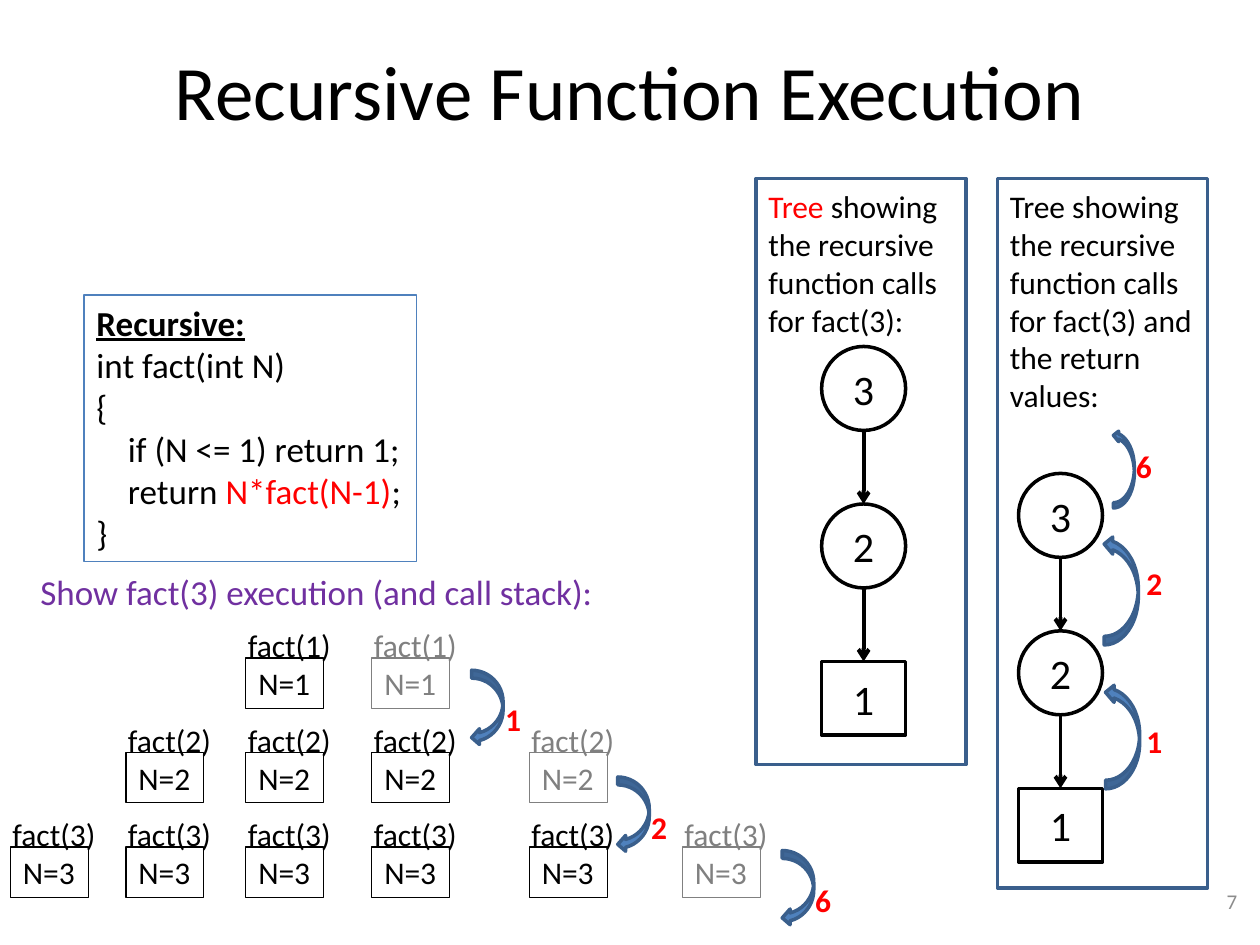
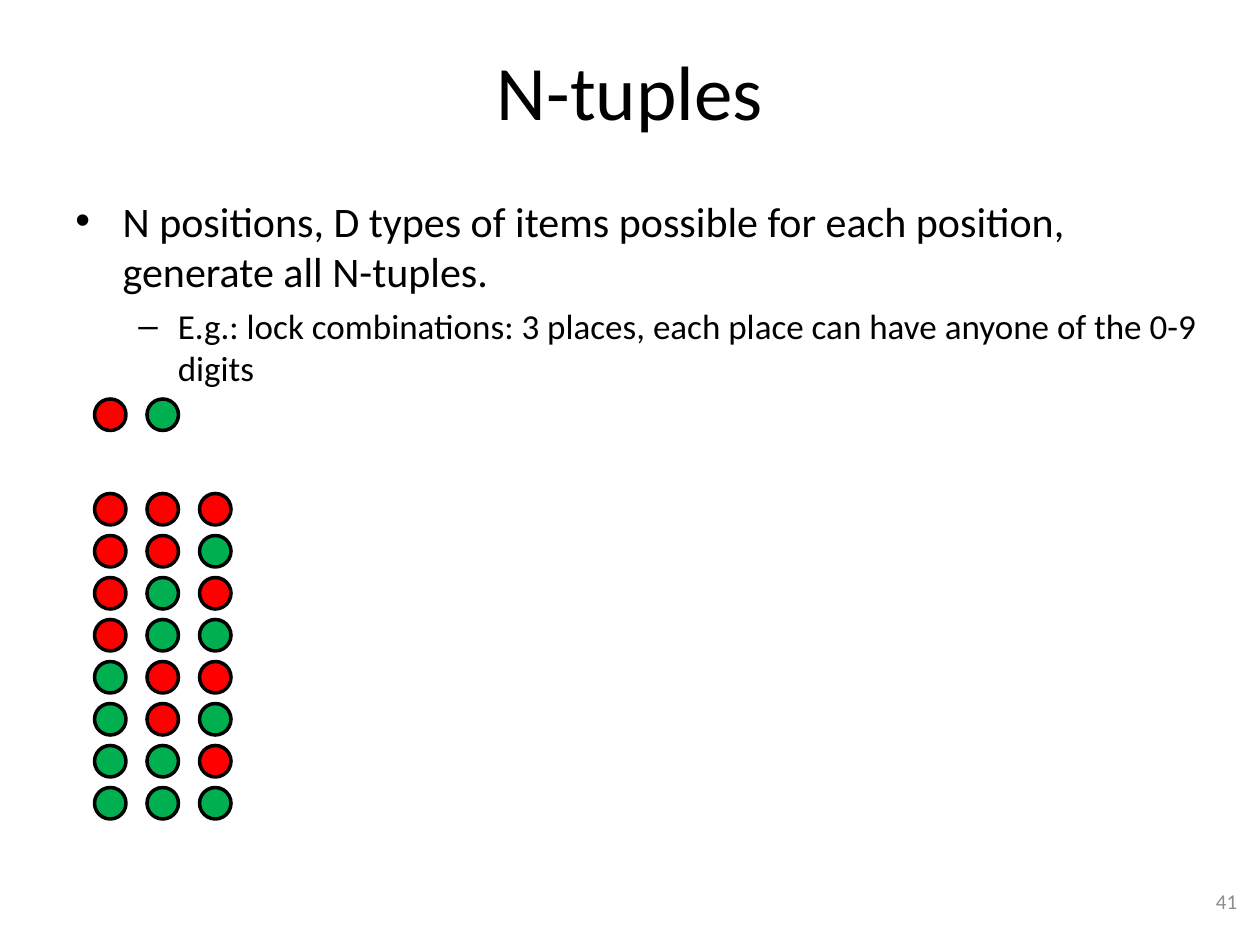
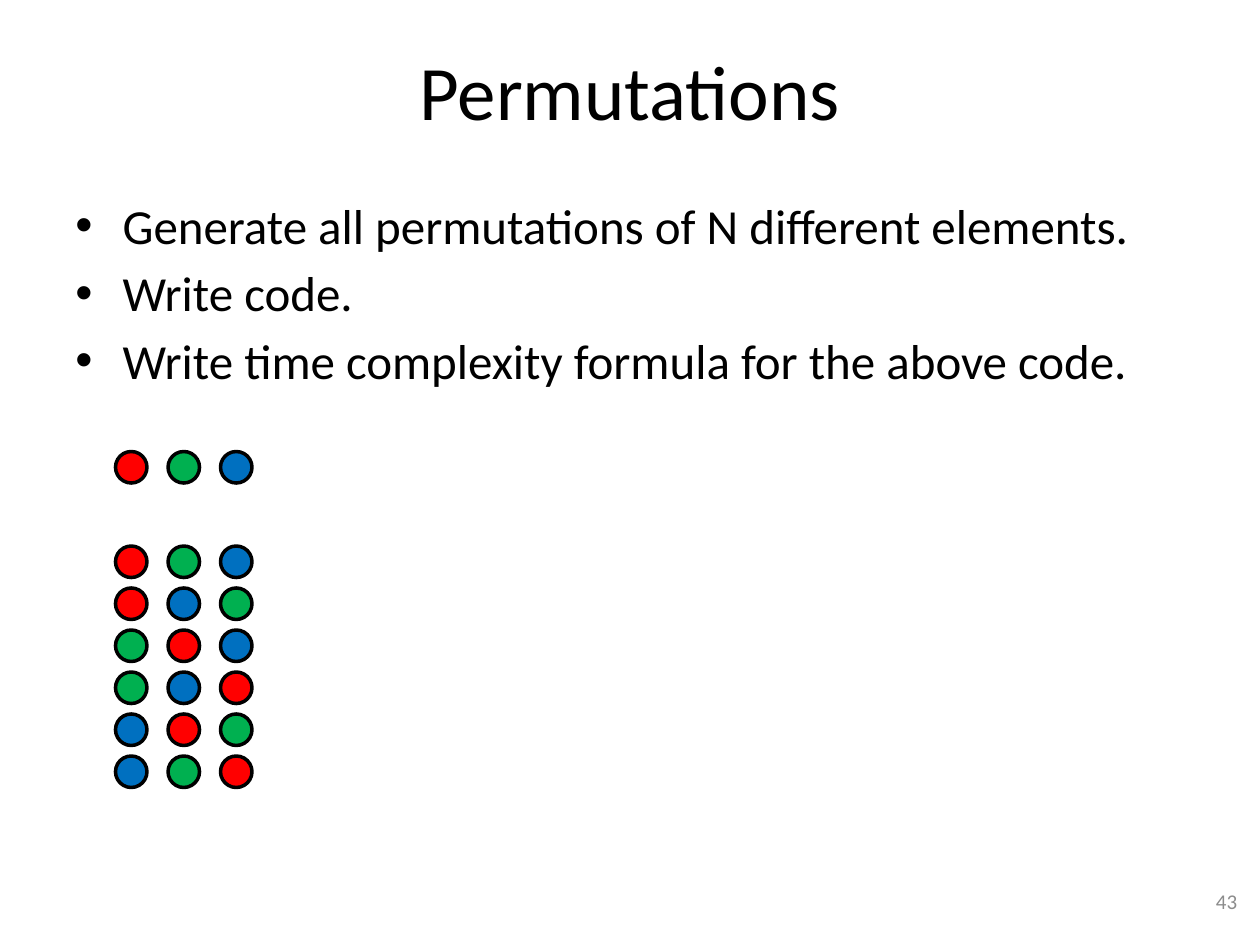
from itertools import permutations, product

from lxml import etree
from pptx import Presentation
from pptx.dml.color import RGBColor
from pptx.enum import shapes, text
from pptx.oxml import ns
from pptx.util import Pt

COLORS = {
    "black": "000000", "red": "FF0000", "green": "00B050", "blue": "0070C0",
    "purple": "7030A0", "gray": "808080", "number": "8C8C8C",
    "accent": "4F81BD", "accent_dark": "3A5F8C",
}
FONT = "Calibri"
RECTANGLE = shapes.MSO_SHAPE.RECTANGLE
OVAL = shapes.MSO_SHAPE.OVAL
LEFT, CENTER, RIGHT = text.PP_ALIGN.LEFT, text.PP_ALIGN.CENTER, text.PP_ALIGN.RIGHT
TOP, MIDDLE = text.MSO_ANCHOR.TOP, text.MSO_ANCHOR.MIDDLE


def add_shape(slide, kind, box, fill=None, line="black", width=2):
    shape = slide.shapes.add_shape(kind, *map(Pt, box))
    shape.shadow.inherit = False
    if fill:
        shape.fill.solid()
        shape.fill.fore_color.rgb = RGBColor.from_string(COLORS[fill])
    else:
        shape.fill.background()
    shape.line.color.rgb = RGBColor.from_string(COLORS[line])
    shape.line.width = Pt(width)
    return shape


def write(shape, lines, size, color="black", bold=False, align=LEFT,
          anchor=TOP, wrap=True, grow=False):
    """Fill a shape with lines; a line is a string or a list of (text, color) runs."""
    frame = shape.text_frame
    frame.word_wrap = wrap
    frame.vertical_anchor = anchor
    if grow:
        frame.auto_size = text.MSO_AUTO_SIZE.SHAPE_TO_FIT_TEXT
    for index, line in enumerate(lines):
        paragraph = frame.add_paragraph() if index else frame.paragraphs[0]
        paragraph.alignment = align
        paragraph.font.name = FONT
        paragraph.font.size = Pt(size)
        paragraph.font.bold = bold
        for words, run_color in [(line, color)] if isinstance(line, str) else line:
            run = paragraph.add_run()
            run.text = words
            run.font.color.rgb = RGBColor.from_string(COLORS[run_color])
    return frame.paragraphs


presentation = Presentation()
presentation.slide_width, presentation.slide_height = Pt(720), Pt(540)

# Titles and slide numbers
slides = []
for title, number in [("Recursive Function Execution", "7"),
                      ("N-tuples", "41"), ("Permutations", "43")]:
    slide = presentation.slides.add_slide(presentation.slide_layouts[5])
    heading = slide.shapes.title
    heading.left, heading.top, heading.width, heading.height = map(Pt, (36, 6, 648, 90))
    write(heading, [title], 44, align=CENTER, anchor=MIDDLE)
    number_box = slide.shapes.add_textbox(*map(Pt, (546, 500.5, 168, 28.8)))
    write(number_box, [number], 12, "number", align=RIGHT, anchor=MIDDLE)
    slides.append(slide)
execution, tuples_slide, permutations_slide = slides

# Code listing
code = add_shape(execution, RECTANGLE, (48, 168.5, 190, 152.6), line="accent", width=0.75)
code_lines = write(code, [
    "Recursive:",
    "int fact(int N)",
    "{",
    "if (N <= 1) return 1;",
    [("return ", "black"), ("N*fact(N-1)", "red"), (";", "black")],
    "}",
], 20, wrap=False, grow=True)
code_lines[0].font.bold = True
code_lines[0].font.underline = True
for paragraph in code_lines[3:5]:
    paragraph._p.get_or_add_pPr().set("marL", str(Pt(18)))

caption = execution.shapes.add_textbox(*map(Pt, (16, 322.5, 333.5, 31.5)))
write(caption, ["Show fact(3) execution (and call stack):"], 20, "purple", wrap=False, grow=True)

# Call stack over time: left edge, top call, whether the top call is returning
for left, top_call, returning in [(6, 3, False), (72, 2, False), (140.5, 1, False),
                                  (212.5, 1, True), (302.5, 2, True), (390, 3, True)]:
    for n in range(3, top_call - 1, -1):
        color = "gray" if returning and n == top_call else "black"
        top = 376 + 54 * (n - 1)
        frame_box = add_shape(execution, RECTANGLE, (left, top, 44.5, 28.8),
                              line=color, width=0.75)
        write(frame_box, [f"N={n}"], 18, color, wrap=False, grow=True)
        label = execution.shapes.add_textbox(*map(Pt, (left - 6, top - 21.6, 62.5, 28.8)))
        write(label, [f"fact({n})"], 18, color, wrap=False, grow=True)

# Panels with call trees
for panel_left, panel_height, tree_left, tree_top, description in [
    (432, 335, 469.5, 198,
     [("Tree", "red"), (" showing the recursive function calls for fact(3):", "black")]),
    (570, 405.5, 582, 270.5,
     "Tree showing the recursive function calls for fact(3) and the return values:"),
]:
    add_shape(execution, RECTANGLE, (panel_left, 102, 120, panel_height), line="accent_dark")
    panel_text = execution.shapes.add_textbox(*map(Pt, (panel_left, 103.5, 120, 94.5)))
    write(panel_text, [description], 18, grow=True)
    for level, n in enumerate((3, 2, 1)):
        top = tree_top + 90 * level
        kind, height = (RECTANGLE, 42) if n == 1 else (OVAL, 48)
        node = add_shape(execution, kind, (tree_left, top, 48, height))
        write(node, [str(n)], 24, align=CENTER, anchor=MIDDLE)
        if n > 1:
            middle = tree_left + 24
            arrow = execution.shapes.add_connector(
                shapes.MSO_CONNECTOR.STRAIGHT, *map(Pt, (middle, top + 48, middle, top + 90)))
            arrow.line.color.rgb = RGBColor.from_string(COLORS["black"])
            arrow.line.width = Pt(2.25)
            etree.SubElement(arrow.line._get_or_add_ln(), ns.qn("a:tailEnd"), type="arrow")
            etree.SubElement(arrow._element.spPr, ns.qn("a:effectLst"))

# Curved return arrows and returned values
STACK_ARROW = shapes.MSO_SHAPE.CURVED_LEFT_ARROW
TREE_ARROW = shapes.MSO_SHAPE.CURVED_UP_ARROW
for kind, arrow_box, value, value_left, value_top in [
    (STACK_ARROW, (269.5, 383, 18, 43), "1", 281.5, 396.7),
    (STACK_ARROW, (353, 444, 18, 43), "2", 365, 458),
    (STACK_ARROW, (447, 486, 18, 43), "6", 458.7, 499.7),
    (TREE_ARROW, (609.5, 327.5, 62.5, 19.5), "2", 648, 319),
    (TREE_ARROW, (611.5, 411, 60, 19.5), "1", 648, 409),
    (TREE_ARROW, (620, 262, 44.5, 12), "6", 642, 252),
]:
    curve = add_shape(execution, kind, arrow_box, "accent", "accent_dark")
    curve.rotation = 270 if kind == TREE_ARROW else 0
    value_box = execution.shapes.add_textbox(*map(Pt, (value_left, value_top, 24, 28.8)))
    write(value_box, [value], 18, "red", bold=True, wrap=False, grow=True)

# Bulleted text: each bullet has its level, size and wording
BULLETS = [("•", 27, 27), ("–", 58.5, 22.5)]
for slide, body_width, body_height, items in [
    (tuples_slide, 660, 120, [
        (0, 24, "N positions, D types of items possible for each position, "
                "generate all N-tuples."),
        (1, 20, "E.g.: lock combinations: 3 places, each place can have anyone "
                "of the 0-9 digits"),
    ]),
    (permutations_slide, 648, 396, [
        (0, 28, "Generate all permutations of N different elements."),
        (0, 28, "Write code."),
        (0, 28, "Write time complexity formula for the above code."),
    ]),
]:
    body = slide.shapes.add_textbox(*map(Pt, (36, 108, body_width, body_height)))
    paragraphs = write(body, [words for _, _, words in items], 28)
    for paragraph, (level, size, _) in zip(paragraphs, items):
        symbol, margin, hanging = BULLETS[level]
        paragraph.level = level
        paragraph.font.size = Pt(size)
        paragraph.space_before = Pt(5)
        properties = paragraph._p.get_or_add_pPr()
        properties.set("marL", str(Pt(margin)))
        properties.set("indent", str(-Pt(hanging)))
        default_font = properties.find(ns.qn("a:defRPr"))
        for tag, name, value in [("a:buFont", "typeface", "Arial"),
                                 ("a:buChar", "char", symbol)]:
            default_font.addprevious(etree.Element(ns.qn(tag), {name: value}))

# Circles: the palette, then every arrangement of it
for slide, grid_left, palette_top, palette, arrangements in [
    (tuples_slide, 54, 228, ("red", "green"), product(("red", "green"), repeat=3)),
    (permutations_slide, 66, 258, ("red", "green", "blue"),
     permutations(("red", "green", "blue"))),
]:
    rows = [(palette_top, palette)]
    rows += [(palette_top + 54 + 24 * row, colors) for row, colors in enumerate(arrangements)]
    for top, colors in rows:
        for column, color in enumerate(colors):
            add_shape(slide, OVAL, (grid_left + 30 * column, top, 18, 18), color)

presentation.save("out.pptx")
